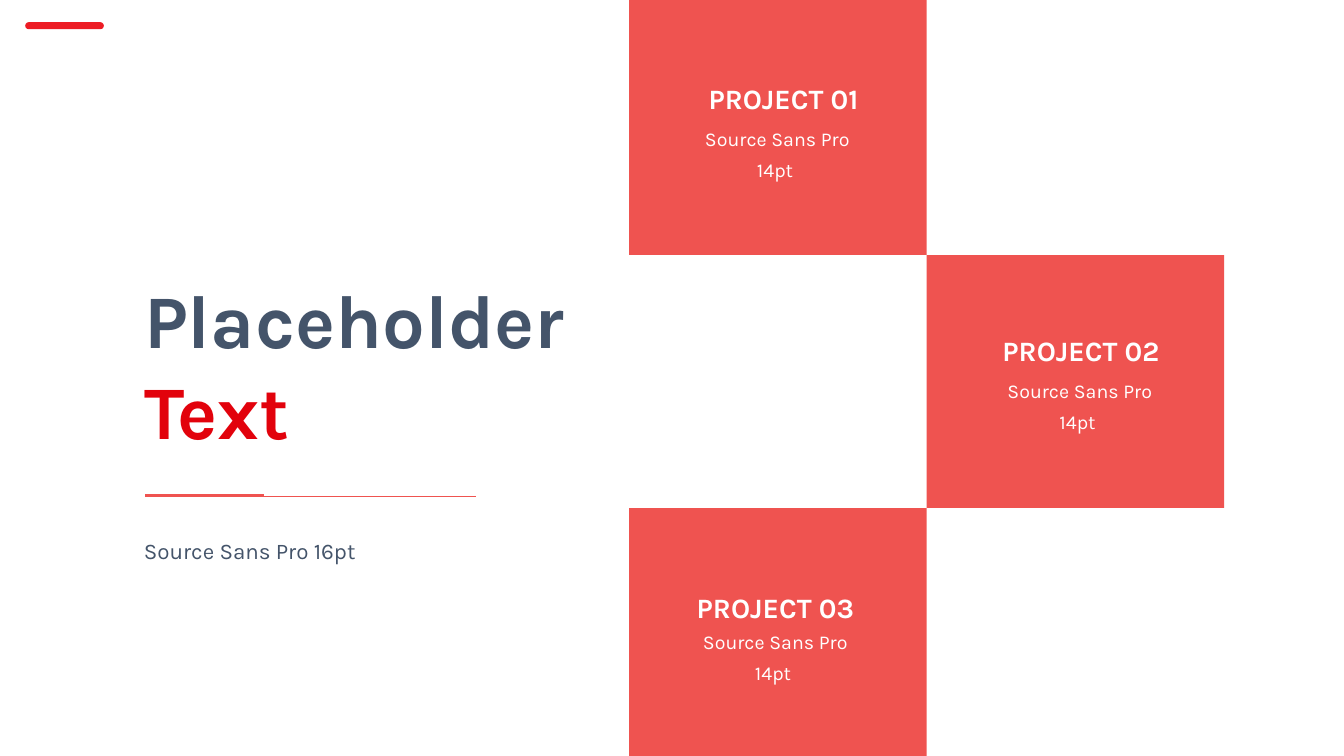
from pptx import Presentation
from pptx.dml.color import RGBColor
from pptx.enum.shapes import MSO_CONNECTOR, MSO_SHAPE
from pptx.enum.text import MSO_AUTO_SIZE, PP_ALIGN
from pptx.oxml.ns import qn
from pptx.util import Inches, Pt
from lxml import etree

LEFT, CENTER = PP_ALIGN.LEFT, PP_ALIGN.CENTER
RECTANGLE, PILL = MSO_SHAPE.RECTANGLE, MSO_SHAPE.ROUNDED_RECTANGLE
STRAIGHT = MSO_CONNECTOR.STRAIGHT
GROW = MSO_AUTO_SIZE.SHAPE_TO_FIT_TEXT

# Content
TITLE = [("Placeholder ", "slate"), ("Text", "red")]
SUBTITLE = "Source Sans Pro 16pt"
DETAILS = ["Source Sans Pro", "14pt "]
# name, column, height, heading (left, top), details (left, top)
PROJECTS = [
    ("PROJECT 01", 0, 2.53, (6.91, 0.76), (6.69, 1.14)),
    ("PROJECT 02", 1, 2.51, (9.86, 3.26), (9.69, 3.64)),
    ("PROJECT 03", 0, 2.46, (6.83, 5.81), (6.67, 6.13)),
]
# right end, height on slide, weight
RULES = [(2.62, 4.92, 2), (4.72, 4.93, 0.75)]

THEME = {
    "font": "Karla",
    "slate": "44546A", "red": "E2020C", "coral": "EF5350",
    "accent": "ED1C24", "white": "FFFFFF",
    "title": 54, "heading": 20, "subtitle": 16, "details": 14,
}

# Layout
TILE_LEFT, TILE_WIDTH = 6.24, 2.95
RULE_LEFT = 1.44


def color(name):
    return RGBColor.from_string(THEME[name])


def add_block(slide, kind, box, fill):
    shape = slide.shapes.add_shape(kind, *map(Inches, box))
    shape.shadow.inherit = False
    shape.fill.solid()
    shape.fill.fore_color.rgb = color(fill)
    shape.line.fill.background()
    return shape


def add_text(slide, box, paragraphs, size, bold=False, align=LEFT,
             spacing=None, margin_left=0.1):
    """Each paragraph is a list of (text, color name) runs."""
    frame = slide.shapes.add_textbox(*map(Inches, box)).text_frame
    frame.word_wrap = True
    frame.auto_size = GROW
    frame.margin_left = Inches(margin_left)
    for index, runs in enumerate(paragraphs):
        paragraph = frame.add_paragraph() if index else frame.paragraphs[0]
        paragraph.alignment = align
        paragraph.line_spacing = spacing
        for text, color_name in runs:
            run = paragraph.add_run()
            run.text = text
            run.font.name = THEME["font"]
            run.font.size = Pt(THEME[size])
            run.font.bold = bold
            run.font.color.rgb = color(color_name)


def add_rule(slide, right, y, weight):
    rule = slide.shapes.add_connector(
        STRAIGHT, Inches(RULE_LEFT), Inches(y), Inches(right), Inches(y))
    rule.line.color.rgb = color("coral")
    rule.line.width = Pt(weight)
    etree.SubElement(rule._element.spPr, qn("a:effectLst"))


def main():
    presentation = Presentation()
    presentation.slide_width = Inches(13.33)
    presentation.slide_height = Inches(7.5)
    slide = presentation.slides.add_slide(presentation.slide_layouts[6])

    # Title, rules and subtitle
    add_text(slide, (1.33, 2.66, 4.61, 1.92), [TITLE], "title", bold=True)
    for rule in RULES:
        add_rule(slide, *rule)
    add_text(slide, (1.33, 5.15, 3.76, 0.46), [[(SUBTITLE, "slate")]],
             "subtitle", spacing=1.5)

    # Checkerboard of project tiles
    top = 0
    for name, column, height, heading_at, details_at in PROJECTS:
        left = TILE_LEFT + column * TILE_WIDTH
        add_block(slide, RECTANGLE, (left, top, TILE_WIDTH, height), "coral")
        add_text(slide, (*heading_at, 1.82, 1.11), [[(name, "white")]],
                 "heading", bold=True, align=CENTER, margin_left=0)
        add_text(slide, (*details_at, 2.04, 0.69),
                 [[(line, "white")] for line in DETAILS],
                 "details", align=CENTER, spacing=1.3)
        top += height

    # Corner accent
    accent = add_block(slide, PILL, (0.25, 0.22, 0.78, 0.07), "accent")
    accent.adjustments[0] = 0.5

    presentation.save("out.pptx")


if __name__ == "__main__":
    main()
